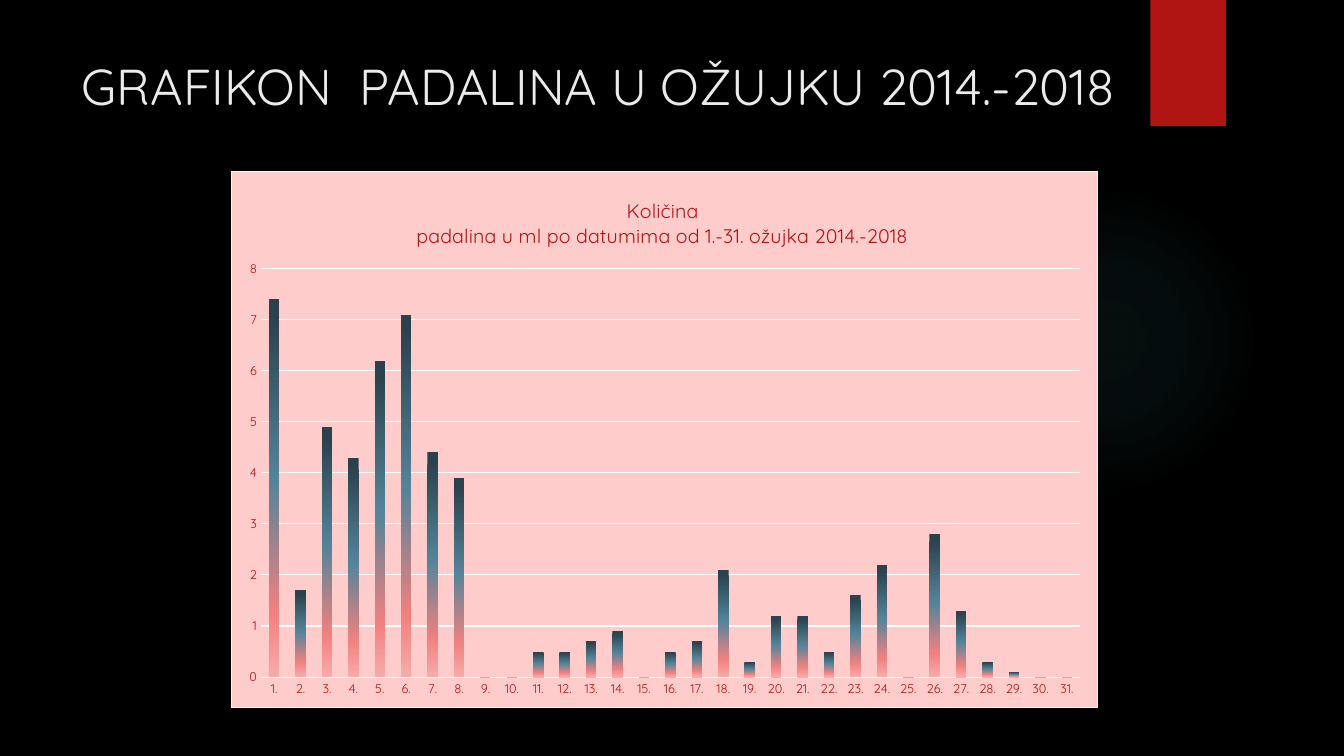
from dataclasses import dataclass

import pptx
import pptx.chart.data
import pptx.dml.color
import pptx.enum.chart
import pptx.enum.shapes
import pptx.enum.text
import pptx.oxml
import pptx.oxml.ns
import pptx.util
from pptx.util import Inches


@dataclass(frozen=True)
class Theme:
    font: str = "Quicksand"
    background: str = "000000"
    heading: str = "EBEBEB"
    accent: str = "B01513"
    panel: str = "FFCCCC"
    lines: str = "FFFFFF"
    glow: str = "50B9C1"
    heading_size: int = 36
    chart_title_size: int = 14
    chart_size: int = 10
    axis_size: int = 9
    line_width: float = 0.75


THEME = Theme()
RAINFALL = [
    7.4, 1.7, 4.9, 4.3, 6.2, 7.1, 4.4, 3.9, 0, 0, 0.5,
    0.5, 0.7, 0.9, 0, 0.5, 0.7, 2.1, 0.3, 1.2, 1.2,
    0.5, 1.6, 2.2, 0, 2.8, 1.3, 0.3, 0.1, 0, 0,
]
CHART_TITLE = ["Količina", "padalina u ml po datumima od 1.-31. ožujka 2014.-2018"]
BAR_STOPS = [(4, "2A424D", 100), (48, "54849A", 100), (83, "F1817F", 100), (100, "F6ABAA", 100)]
GLOW_STOPS = [(0, THEME.glow, 7), (36, THEME.glow, 6), (69, THEME.glow, 0)]
DOWNWARD = '<a:lin ang="5400000" scaled="0"/>'
RADIAL = '<a:path path="circle"><a:fillToRect l="50000" t="50000" r="50000" b="50000"/></a:path>'


def rgb(value):
    return pptx.dml.color.RGBColor.from_string(value)


def style_font(font, size, color):
    font.name = THEME.font
    font.size = pptx.util.Pt(size)
    font.bold = False
    font.color.rgb = rgb(color)


def set_gradient(fill, properties, stops, direction):
    """Fill with (position, colour, opacity) stops, all in percent."""
    fill.gradient()
    stop_xml = "".join(
        f'<a:gs pos="{position * 1000}"><a:srgbClr val="{color}">'
        f'<a:alpha val="{opacity * 1000}"/></a:srgbClr></a:gs>'
        for position, color, opacity in stops
    )
    gradient = pptx.oxml.parse_xml(
        f'<a:gradFill {pptx.oxml.ns.nsdecls("a")} rotWithShape="1">'
        f"<a:gsLst>{stop_xml}</a:gsLst>{direction}</a:gradFill>"
    )
    previous = properties.find(pptx.oxml.ns.qn("a:gradFill"))
    properties.replace(previous, gradient)


def add_decoration(slide, kind, left, top, width, height):
    decoration = slide.shapes.add_shape(
        kind, Inches(left), Inches(top), Inches(width), Inches(height)
    )
    decoration.shadow.inherit = False
    decoration.line.fill.background()
    return decoration


def set_heading(slide, wording):
    heading = slide.shapes.title
    heading.left, heading.top = Inches(0.71), Inches(0.5)
    heading.width, heading.height = Inches(10.88), Inches(1.53)
    frame = heading.text_frame
    frame.text = wording
    frame.word_wrap = True
    frame.auto_size = pptx.enum.text.MSO_AUTO_SIZE.NONE
    frame.vertical_anchor = pptx.enum.text.MSO_ANCHOR.TOP
    line = frame.paragraphs[0]
    line.alignment = pptx.enum.text.PP_ALIGN.LEFT
    style_font(line.runs[0].font, THEME.heading_size, THEME.heading)


def set_layout(element, inner=False, **fractions):
    """Place a chart part by fractions of the chart's size."""
    for previous in element.findall(pptx.oxml.ns.qn("c:layout")):
        element.remove(previous)
    target = '<c:layoutTarget val="inner"/>' if inner else ""
    modes = '<c:xMode val="edge"/><c:yMode val="edge"/>'
    places = "".join(f'<c:{key} val="{value}"/>' for key, value in fractions.items())
    layout = pptx.oxml.parse_xml(
        f'<c:layout {pptx.oxml.ns.nsdecls("c")}><c:manualLayout>'
        f"{target}{modes}{places}</c:manualLayout></c:layout>"
    )
    text = element.find(pptx.oxml.ns.qn("c:tx"))
    if text is None:
        element.insert(0, layout)
    else:
        text.addnext(layout)


def set_chart_title(chart, lines):
    frame = chart.chart_title.text_frame
    frame.text = "\n".join(lines)
    for paragraph in frame.paragraphs:
        paragraph.alignment = pptx.enum.text.PP_ALIGN.CENTER
        style_font(paragraph.runs[0].font, THEME.chart_title_size, THEME.accent)
    set_layout(chart.chart_title._element, x=0.21, y=0.04)


def style_axis(axis):
    axis.major_tick_mark = pptx.enum.chart.XL_TICK_MARK.NONE
    axis.minor_tick_mark = pptx.enum.chart.XL_TICK_MARK.NONE
    axis.format.line.fill.background()
    style_font(axis.tick_labels.font, THEME.axis_size, THEME.accent)


def set_chart_panel(chart):
    panel = pptx.oxml.parse_xml(
        f'<c:spPr {pptx.oxml.ns.nsdecls("c", "a")}>'
        f'<a:solidFill><a:srgbClr val="{THEME.panel}"/></a:solidFill>'
        f'<a:ln w="{pptx.util.Pt(THEME.line_width)}"><a:solidFill>'
        f'<a:srgbClr val="{THEME.lines}"/></a:solidFill></a:ln></c:spPr>'
    )
    chart._chartSpace.chart.addnext(panel)


def add_rainfall_chart(slide):
    rainfall = pptx.chart.data.CategoryChartData()
    rainfall.categories = [f"{day}." for day in range(1, len(RAINFALL) + 1)]
    rainfall.add_series("Series 1", RAINFALL)
    chart = slide.shapes.add_chart(
        pptx.enum.chart.XL_CHART_TYPE.COLUMN_CLUSTERED,
        Inches(2.29), Inches(1.7), Inches(8.6), Inches(5.32), rainfall,
    ).chart
    chart.has_legend = False
    style_font(chart.font, THEME.chart_size, THEME.lines)
    set_chart_panel(chart)
    set_chart_title(chart, CHART_TITLE)
    set_layout(chart._chartSpace.chart.plotArea, inner=True, x=0.034, y=0.181, w=0.946, h=0.763)

    for axis in (chart.category_axis, chart.value_axis):
        style_axis(axis)
    scale = chart.value_axis
    scale.minimum_scale, scale.maximum_scale, scale.major_unit = 0, 8, 1
    scale.tick_labels.number_format = "General"
    scale.tick_labels.number_format_is_linked = False
    grid = scale.major_gridlines.format.line
    grid.color.rgb = rgb(THEME.lines)
    grid.width = pptx.util.Pt(THEME.line_width)

    plot = chart.plots[0]
    plot.gap_width = 150
    plot.vary_by_categories = False
    bars = plot.series[0]
    bars.invert_if_negative = False
    set_gradient(bars.format.fill, bars._element.get_or_add_spPr(), BAR_STOPS, DOWNWARD)


def main():
    deck = pptx.Presentation()
    deck.slide_width, deck.slide_height = Inches(13.33), Inches(7.5)
    slide = deck.slides.add_slide(deck.slide_layouts[5])
    slide.background.fill.solid()
    slide.background.fill.fore_color.rgb = rgb(THEME.background)

    shapes = pptx.enum.shapes.MSO_SHAPE
    glow = add_decoration(slide, shapes.OVAL, 9.41, 1.83, 3.08, 3.08)
    set_gradient(glow.fill, glow._element.spPr, GLOW_STOPS, RADIAL)
    ribbon = add_decoration(slide, shapes.RECTANGLE, 11.41, 0, 0.75, 1.25)
    ribbon.fill.solid()
    ribbon.fill.fore_color.rgb = rgb(THEME.accent)

    set_heading(slide, "GRAFIKON  PADALINA U OŽUJKU 2014.-2018")
    add_rainfall_chart(slide)
    deck.save("out.pptx")


if __name__ == "__main__":
    main()
